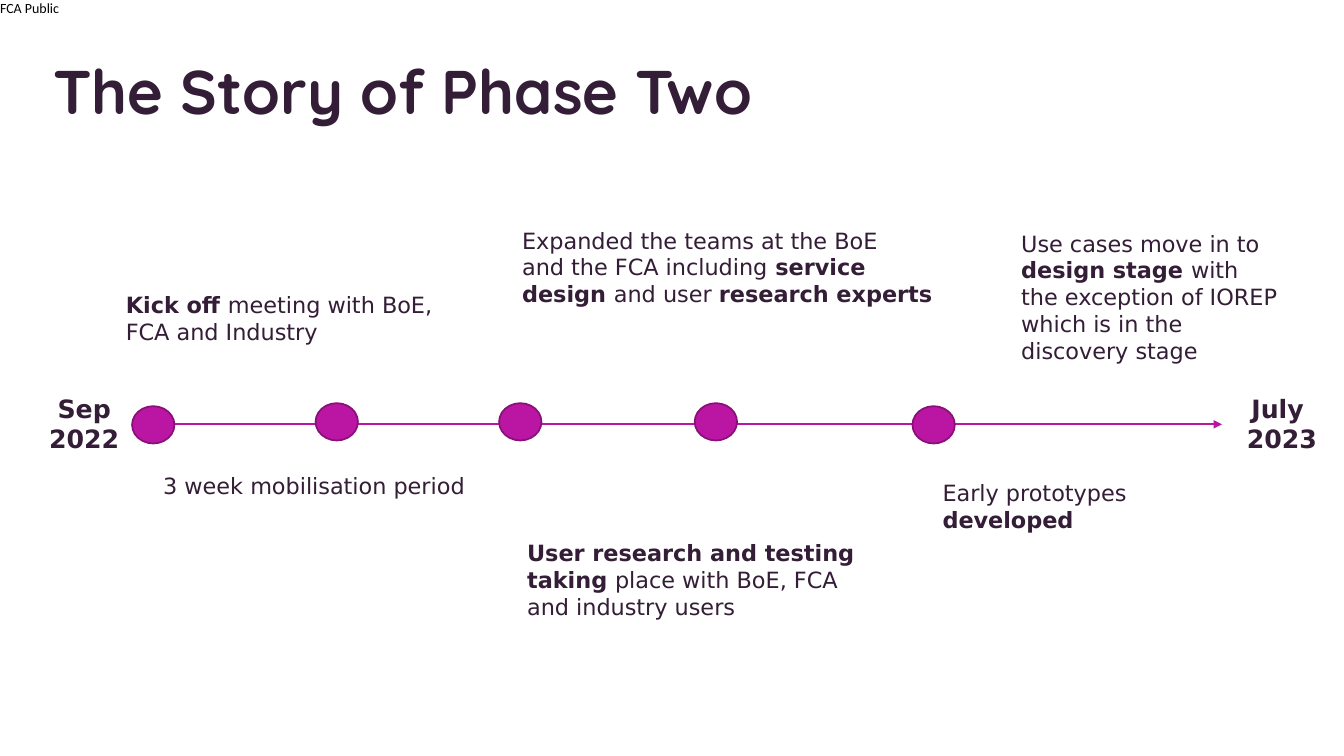
"""Build the Phase Two timeline slide."""
from lxml import etree
from pptx import Presentation
from pptx.dml.color import RGBColor
from pptx.enum.shapes import MSO_CONNECTOR, MSO_SHAPE
from pptx.enum.text import MSO_ANCHOR, PP_ALIGN
from pptx.oxml.ns import qn
from pptx.util import Inches, Pt

OVAL = MSO_SHAPE.OVAL
LINE = MSO_CONNECTOR.STRAIGHT
TOP, MID = MSO_ANCHOR.TOP, MSO_ANCHOR.MIDDLE
LEFT, CENTER = PP_ALIGN.LEFT, PP_ALIGN.CENTER

DARK, PINK, EDGE = "341D36", "BB16A3", "8A1079"
TITLE = "The Story of Phase Two"
LABEL = "FCA Public"
ENDS = [
    ("Sep\n2022", (0.36, 3.85, 0.95, 0.71)),
    ("July \n2023", (12.12, 3.85, 1.19, 0.71)),
]
NOTES = [
    ("**Kick off **meeting with BoE,\nFCA and Industry",
     (1.15, 2.84, 3.3, 0.64), TOP, False),
    ("3 week mobilisation period", (1.52, 4.58, 3.28, 0.47), MID, True),
    ("Expanded the teams at the BoE \nand the FCA including** service \n"
     "design **and user **research experts**",
     (5.08, 2.2, 4.38, 0.91), TOP, False),
    ("**User research and testing taking **place with BoE, FCA "
     "and industry users", (5.13, 5.27, 3.76, 0.96), MID, True),
    ("Early prototypes **developed**", (9.25, 4.54, 2.5, 0.96), MID, True),
    ("Use cases move in to **design stage **with the exception of IOREP "
     "which is in the discovery stage",
     (10.03, 2.23, 2.78, 1.45), TOP, True),
]
DOTS = [(1.31, 4.03), (3.13, 4), (4.95, 4), (6.89, 4), (9.05, 4.03)]
DOT_W, DOT_H = 0.42, 0.37
START, END, AXIS = 1.31, 12.12, 4.21


def color(code):
    return RGBColor.from_string(code)


def add_text(slide, text, area, size=16, font="DejaVu Sans", ink=DARK,
             bold=False, align=LEFT, anchor=TOP, wrap=True, inset=None):
    """Add a text box; ** toggles bold and a newline breaks the line."""
    box = slide.shapes.add_textbox(*map(Inches, area))
    frame = box.text_frame
    frame.word_wrap = wrap
    frame.vertical_anchor = anchor
    if inset is not None:
        frame.margin_left = frame.margin_right = Inches(inset)
        frame.margin_top = frame.margin_bottom = Inches(inset)
    para = frame.paragraphs[0]
    para.alignment = align
    for i, part in enumerate(text.split("**")):
        for j, piece in enumerate(part.split("\n")):
            if j:
                para.add_line_break()
            if piece:
                run = para.add_run()
                run.text = piece
                run.font.size = Pt(size)
                run.font.name = font
                run.font.bold = bold or i % 2 == 1
                run.font.color.rgb = color(ink)


def add_axis(slide):
    axis = slide.shapes.add_connector(
        LINE, Inches(START), Inches(AXIS), Inches(END), Inches(AXIS))
    axis.line.color.rgb = color(PINK)
    axis.line.width = Pt(1.25)
    props = axis.line._get_or_add_ln()
    etree.SubElement(props, qn("a:tailEnd"), type="triangle")
    etree.SubElement(axis._element.spPr, qn("a:effectLst"))


def add_dot(slide, left, top):
    dot = slide.shapes.add_shape(
        OVAL, *map(Inches, (left, top, DOT_W, DOT_H)))
    dot.shadow.inherit = False
    dot.fill.solid()
    dot.fill.fore_color.rgb = color(PINK)
    dot.line.color.rgb = color(EDGE)
    dot.line.width = Pt(1.25)


def main():
    deck = Presentation()
    deck.slide_width, deck.slide_height = Inches(13.33), Inches(7.5)
    slide = deck.slides.add_slide(deck.slide_layouts[6])
    add_text(slide, LABEL, (0, 0, 0.62, 0.17), size=10, font="Calibri",
             ink="000000", wrap=False, inset=0)
    add_text(slide, TITLE, (0.43, 0.31, 11.68, 1.16), size=44,
             font="Quicksand", bold=True, anchor=MID)
    add_axis(slide)
    for text, area in ENDS:
        add_text(slide, text, area, size=18, bold=True, align=CENTER)
    for left, top in DOTS:
        add_dot(slide, left, top)
    for text, area, anchor, wrap in NOTES:
        add_text(slide, text, area, anchor=anchor, wrap=wrap)
    deck.save("out.pptx")


if __name__ == "__main__":
    main()
